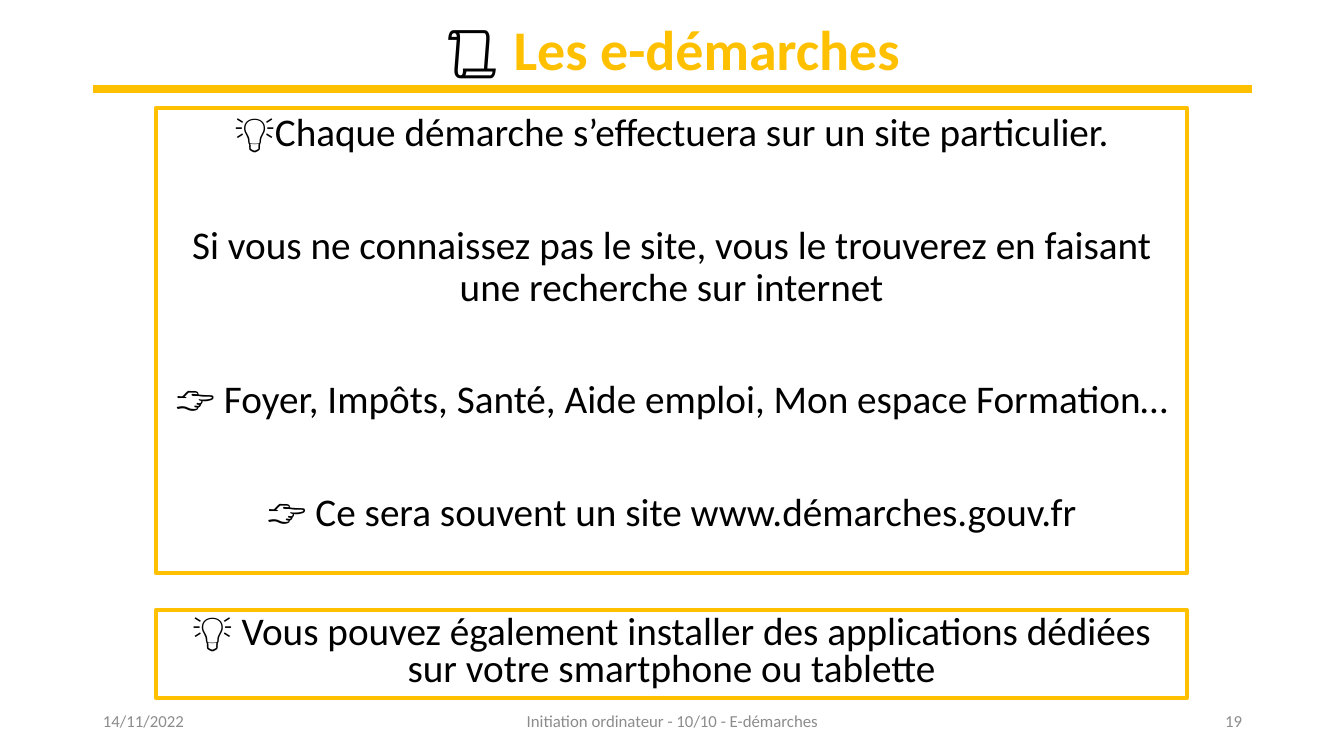
from lxml.etree import SubElement
from pptx import Presentation
from pptx.dml.color import RGBColor
from pptx.enum.shapes import MSO_CONNECTOR, MSO_SHAPE
from pptx.enum.text import MSO_ANCHOR, PP_ALIGN
from pptx.oxml.ns import qn
from pptx.util import Pt

EMU_PER_PX = 914400 / 100.8
WIDTH, HEIGHT = 1344, 756
MARGIN, CONTENT_WIDTH = 93, 1159
GOLD, BLACK, GREY = "FFC000", "000000", "8C8C8C"

ADVICE = [
    "💡Chaque démarche s’effectuera sur un site particulier.",
    "Si vous ne connaissez pas le site, vous le trouverez en faisant "
    "une recherche sur internet",
    "👉 Foyer, Impôts, Santé, Aide emploi, Mon espace Formation…",
    "👉 Ce sera souvent un site www.démarches.gouv.fr",
]
APPS = ["💡 Vous pouvez également installer des applications dédiées "
        "sur votre smartphone ou tablette"]


def px(length):
    """Turn pixels into EMU."""
    return round(length * EMU_PER_PX)


def color(code):
    """Turn a hex string into a colour."""
    return RGBColor.from_string(code)


def style(run, size, code, bold=False):
    """Set the font of a run."""
    run.font.name = "Calibri"
    run.font.size = Pt(size)
    run.font.bold = bold
    run.font.color.rgb = color(code)


def add_heading(slide, left, top, width, height):
    """Place the title and the gold rule that crosses its box."""
    rule_y = top + 110
    rule = slide.shapes.add_connector(
        MSO_CONNECTOR.STRAIGHT, px(left), px(rule_y), px(left + width), px(rule_y))
    rule.line.color.rgb = color(GOLD)
    rule.line.width = Pt(6)
    SubElement(rule._element.spPr, qn("a:effectLst"))

    title = slide.shapes.title
    title.left, title.top = px(left), px(top)
    title.width, title.height = px(width), px(height)
    title.text_frame.vertical_anchor = MSO_ANCHOR.MIDDLE
    heading = title.text_frame.paragraphs[0]
    heading.alignment = PP_ALIGN.CENTER
    heading.line_spacing = 0.9
    for words, code in (("📜 ", BLACK), ("Les e-démarches", GOLD)):
        run = heading.add_run()
        run.text = words
        style(run, 40, code, bold=True)


def add_panel(slide, left, top, width, height, messages, line_spacing):
    """Place a gold frame holding centred messages."""
    panel = slide.shapes.add_shape(
        MSO_SHAPE.RECTANGLE, px(left), px(top), px(width), px(height))
    panel.shadow.inherit = False
    panel.fill.background()
    panel.line.color.rgb = color(GOLD)
    panel.line.width = Pt(3)
    frame = panel.text_frame
    frame.word_wrap = True
    frame.vertical_anchor = MSO_ANCHOR.TOP
    frame.text = "\n".join(messages)
    for index, message in enumerate(frame.paragraphs):
        message.alignment = PP_ALIGN.CENTER
        message.line_spacing = line_spacing
        message.space_before = Pt(50 if index else 10)
        style(message.runs[0], 28, BLACK)


def add_footer(slide, left, top, width, height):
    """Place the date, the course name and the page number in one row."""
    side, middle = 302, 454
    entries = [
        ("14/11/2022", left, side, PP_ALIGN.LEFT),
        ("Initiation ordinateur - 10/10 - E-démarches",
         left + (width - middle) / 2, middle, PP_ALIGN.CENTER),
        ("19", left + width - side, side, PP_ALIGN.RIGHT),
    ]
    for words, entry_left, entry_width, alignment in entries:
        entry = slide.shapes.add_textbox(
            px(entry_left), px(top), px(entry_width), px(height))
        frame = entry.text_frame
        frame.word_wrap = True
        frame.vertical_anchor = MSO_ANCHOR.MIDDLE
        frame.text = words
        frame.paragraphs[0].alignment = alignment
        style(frame.paragraphs[0].runs[0], 12, GREY)


def main():
    """Build and save the slide."""
    deck = Presentation()
    deck.slide_width, deck.slide_height = px(WIDTH), px(HEIGHT)
    slide = deck.slides.add_slide(deck.slide_layouts[5])
    add_heading(slide, MARGIN, -21, CONTENT_WIDTH, 146)
    add_panel(slide, 156, 108, 1031, 465, ADVICE, 0.9)
    add_panel(slide, 156, 610, 1031, 88, APPS, 0.8)
    add_footer(slide, MARGIN, 701, CONTENT_WIDTH, 40)
    deck.save("out.pptx")


if __name__ == "__main__":
    main()
